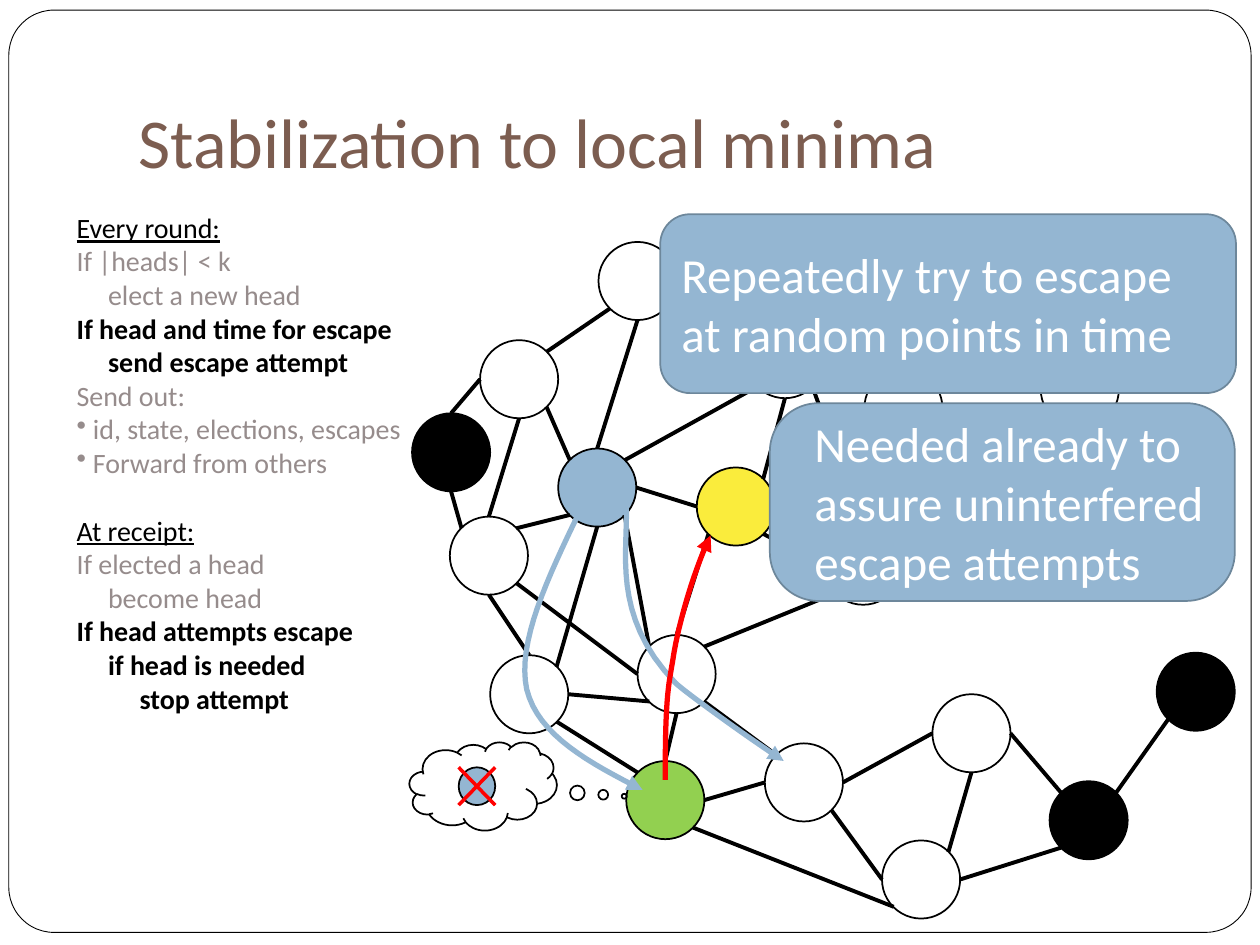
from pptx import Presentation, util as u
from pptx.dml.color import RGBColor
from pptx.enum import shapes as s, text as t
from pptx.oxml.ns import qn
from lxml import etree

BLACK = RGBColor(0, 0, 0)
WHITE = RGBColor(255, 255, 255)
BLUE = RGBColor(0x94, 0xB6, 0xD2)
STEEL = RGBColor(0x6D, 0x87, 0x9B)
YELLOW = RGBColor(0xFA, 0xEC, 0x3C)
GREEN = RGBColor(0x92, 0xD0, 0x50)
RED = RGBColor(255, 0, 0)
GRAY = RGBColor(0x96, 0x8C, 0x8C)
BROWN = RGBColor(0x7C, 0x5D, 0x50)

DIAM = 0.62
SITES = {"N": (0.5, 0), "NE": (0.85, 0.15), "E": (1, 0.5), "SE": (0.85, 0.85),
         "S": (0.5, 1), "SW": (0.15, 0.85), "W": (0, 0.5), "NW": (0.15, 0.15)}
NODES = {
    "blue": (4.43, 3.56, BLUE), "b": (6.86, 2.93, WHITE), "c": (6.54, 4.18, WHITE),
    "d": (3.89, 5.2, WHITE), "e": (5.06, 5.04, WHITE), "f": (3.57, 4.1, WHITE),
    "g": (4.75, 1.92, WHITE), "h": (3.81, 2.7, WHITE), "i": (5.92, 2.54, WHITE),
    "j": (6.07, 5.9, WHITE), "k": (7, 6.67, WHITE), "l": (8.33, 6.2, BLACK),
    "m": (8.26, 2.78, WHITE), "gold": (5.53, 3.71, YELLOW), "n": (3.27, 3.28, BLACK),
    "o": (7.4, 5.51, WHITE), "p": (9.18, 5.18, BLACK), "green": (4.97, 6.04, GREEN),
}
EDGES = """blue E gold W, gold NE i S, h SE blue NW, blue NE i SW, gold SE c W,
g S blue N, h NE g SW, i SE c N, d E e SW, f S d N, h S f N, f SE e W, n S f NW,
e SE j NW, e NE c SW, d NE blue S, e N gold SW, e NW blue SE, f NE blue SW,
n N h W, k NE o S, l SW k E, l NW o E, k W j SE, j E o W, p SW l NE,
green N e S, green E j W, green NW d SE, k SW green SE"""
ARROWS = [
    (BLUE, [(4.6, 4.06), (4.35, 4.58), (4.1, 5.1), (4.18, 5.47),
            (4.27, 5.84), (4.69, 6.06), (5.1, 6.27)]),
    (BLUE, [(4.97, 4.01), (4.99, 4.36), (4.84, 4.88), (5.36, 5.42),
            (5.42, 5.48), (5.9, 5.83), (6.22, 6.04)]),
    (RED, [(5.28, 6.19), (5.28, 5.47), (5.31, 5.44), (5.35, 5.18),
           (5.38, 5), (5.48, 4.59), (5.64, 4.25)]),
]
STEPS = [
    ("Every round:", "head", 0), ("If |heads| < k", "dim", 0),
    ("elect a new head", "dim", 1), ("If head and time for escape", "bold", 0),
    ("send escape attempt", "bold", 1), ("Send out:", "dim", 0),
    ("id, state, elections, escapes", "item", 0), ("Forward from others", "item", 0),
    ("At receipt:", "head", 0), ("If elected a head", "dim", 0),
    ("become head", "dim", 1), ("If head attempts escape", "bold", 0),
    ("if head is needed", "bold", 1), ("stop attempt", "bold", 2),
]


def put(obj, **vals):
    """Set attributes from format values."""
    for key, val in vals.items():
        setattr(obj, key, val)


def style(font, size, color, **more):
    """Format a font."""
    put(font, name="Calibri", size=u.Pt(size), **more)
    font.color.rgb = color


def stroke(line, color, width):
    """Colour and size a line."""
    line.color.rgb = color
    line.width = u.Pt(width)


def shape(slide, kind, box, fill, line=BLACK, width=1, adj=()):
    """Add a preset shape in a box."""
    item = slide.shapes.add_shape(kind, *map(u.Inches, box))
    item.shadow.inherit = False
    for pos, val in enumerate(adj):
        item.adjustments[pos] = val
    if fill is None:
        item.fill.background()
    else:
        item.fill.solid()
        item.fill.fore_color.rgb = fill
    stroke(item.line, line, width)
    return item


def disc(slide, box, fill):
    """Add a round node."""
    return shape(slide, s.MSO_SHAPE.FLOWCHART_CONNECTOR, box, fill)


def link(slide, start, end, color=BLACK, width=2.25):
    """Add a straight line between two points."""
    item = slide.shapes.add_connector(s.MSO_CONNECTOR.STRAIGHT,
                                      *map(u.Inches, (*start, *end)))
    stroke(item.line, color, width)
    etree.SubElement(item._element.spPr, qn("a:effectLst"))


def curve(slide, color, pts, count=16):
    """Add a curved arrow through joined cubic segments."""
    path = []
    for pos in range(0, len(pts) - 1, 3):
        for step in range(1, count + 1):
            v = step / count
            mix = ((1 - v) ** 3, 3 * v * (1 - v) ** 2, 3 * v * v * (1 - v), v ** 3)
            path.append(tuple(u.Inches(sum(m * p[axis] for m, p in zip(mix, pts[pos:pos + 4])))
                              for axis in (0, 1)))
    pen = slide.shapes.build_freeform(*map(u.Inches, pts[0]))
    pen.add_line_segments(path, close=False)
    item = pen.convert_to_shape()
    item.shadow.inherit = False
    item.fill.background()
    stroke(item.line, color, 3)
    etree.SubElement(item.line._get_or_add_ln(), qn("a:tailEnd"), type="triangle")


def title(slide, box, words):
    """Place the slide title."""
    item = slide.shapes.title
    put(item, **dict(zip(("left", "top", "width", "height"), map(u.Inches, box))))
    put(item.text_frame, text=words, vertical_anchor=t.MSO_ANCHOR.BOTTOM,
        margin_bottom=u.Inches(0.1))
    para = item.text_frame.paragraphs[0]
    para.alignment = t.PP_ALIGN.LEFT
    style(para.runs[0].font, 40, BROWN)


def steps(slide, box):
    """List the steps of the algorithm."""
    frame = slide.shapes.add_textbox(*map(u.Inches, box)).text_frame
    frame.word_wrap = True
    for pos, (words, kind, level) in enumerate(STEPS):
        para = frame.paragraphs[0] if pos == 0 else frame.add_paragraph()
        run = para.add_run()
        run.text = words
        style(run.font, 16, GRAY if kind in ("dim", "item") else BLACK,
              bold=kind == "bold", underline=kind == "head")
        if kind == "head" and pos:
            para.space_before = u.Pt(19.5)
        props = para._p.get_or_add_pPr()
        props.set("marL", str(u.Inches(0.13 if kind == "item" else 0.25 * level)))
        if kind == "item":
            props.set("indent", str(u.Inches(-0.13)))
            etree.SubElement(props, qn("a:buChar"), char="•")


def spot(name, site):
    """Find a site on the rim of a node."""
    left, top, _ = NODES[name]
    x, y = SITES[site]
    return left + x * DIAM, top + y * DIAM


def graph(slide):
    """Draw the network of nodes and edges."""
    for left, top, fill in NODES.values():
        disc(slide, (left, top, DIAM, DIAM), fill)
    for edge in EDGES.split(","):
        one, out, two, into = edge.split()
        link(slide, spot(one, out), spot(two, into))


def thought(slide, box):
    """Draw a cloud holding a crossed-out node."""
    left, top, _, _ = box
    shape(slide, s.MSO_SHAPE.CLOUD_CALLOUT, box, None, adj=(0.957, 0.114))
    x, y, wide, high = left + 0.39, top + 0.2, 0.29, 0.3
    disc(slide, (x, y, wide, high), BLUE)
    link(slide, (x, y), (x + wide, y + high), RED, 2)
    link(slide, (x + wide, y), (x, y + high), RED, 2)


def note(slide, box, lines, adj, inset):
    """Add a rounded note with large text."""
    item = shape(slide, s.MSO_SHAPE.ROUNDED_RECTANGLE, box, BLUE, STEEL, adj=(adj,))
    frame = item.text_frame
    put(frame, text="\n".join(lines), word_wrap=True, margin_left=u.Inches(inset),
        vertical_anchor=t.MSO_ANCHOR.MIDDLE)
    for para in frame.paragraphs:
        para.alignment = t.PP_ALIGN.LEFT
        style(para.runs[0].font, 28, WHITE)


def main():
    """Build and save the slide."""
    deck = Presentation()
    put(deck, slide_width=u.Inches(10), slide_height=u.Inches(7.5))
    slide = deck.slides.add_slide(deck.slide_layouts[5])
    shape(slide, s.MSO_SHAPE.ROUNDED_RECTANGLE, (0.07, 0.08, 9.86, 7.32), None,
          width=0.5, adj=(0.049,))
    title(slide, (1, 0.3, 8.5, 1.25), "Stabilization to local minima")
    steps(slide, (0.51, 1.62, 3.07, 4.85))
    graph(slide)
    thought(slide, (3.25, 5.89, 1.17, 0.7))
    for color, pts in ARROWS:
        curve(slide, color, pts)
    note(slide, (5.24, 1.7, 4.57, 1.42),
         ["Repeatedly try to escape", "at random points in time"], 0.167, 0.1)
    note(slide, (6.11, 3.2, 3.69, 1.57),
         ["Needed already to assure uninterfered escape attempts"], 0.246, 0.24)
    deck.save("out.pptx")


if __name__ == "__main__":
    main()
